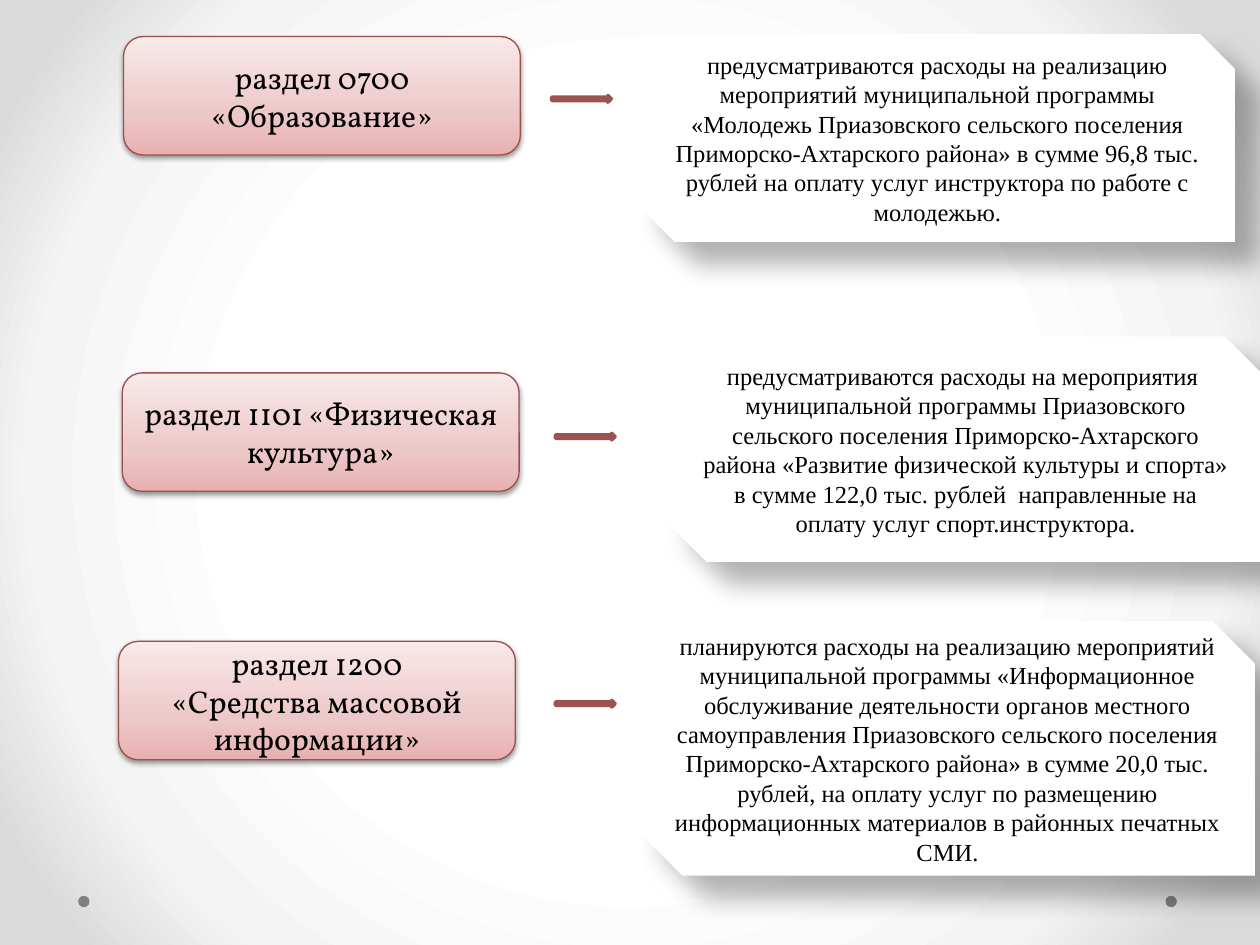
from pptx import Presentation
from pptx.dml.color import RGBColor
from pptx.enum.shapes import MSO_SHAPE as Shape
from pptx.enum.text import MSO_ANCHOR as Anchor, PP_ALIGN as Align
from pptx.oxml import parse_xml
from pptx.oxml.ns import nsdecls, qn
from pptx.util import Inches, Pt

ROWS = [
    {
        "head": ["раздел 0700 «Образование»"],
        "note": "предусматриваются расходы на реализацию мероприятий муниципальной "
                "программы «Молодежь Приазовского сельского поселения "
                "Приморско-Ахтарского района» в сумме 96,8 тыс. рублей на оплату "
                "услуг инструктора по работе с молодежью.",
        "label": (0.98, 0.29), "arrow": (4.38, 0.76),
        "card": (5.08, 0.27, 4.72, 1.65),
    },
    {
        "head": ["раздел 1101 «Физическая культура»"],
        "note": "предусматриваются расходы на мероприятия  муниципальной программы "
                "Приазовского сельского поселения Приморско-Ахтарского района "
                "«Развитие физической культуры и спорта» в сумме 122,0 тыс. рублей  "
                "направленные на оплату услуг спорт.инструктора.",
        "label": (0.97, 2.96), "arrow": (4.41, 3.44),
        "card": (5.31, 2.67, 4.71, 1.79),
    },
    {
        "head": ["раздел 1200", "«Средства массовой информации»"],
        "note": "планируются расходы на реализацию мероприятий муниципальной "
                "программы «Информационное обслуживание деятельности органов "
                "местного самоуправления Приазовского сельского поселения "
                "Приморско-Ахтарского района» в сумме 20,0 тыс. рублей, на оплату "
                "услуг по размещению информационных материалов в районных печатных "
                "СМИ.",
        "label": (0.94, 5.09), "arrow": (4.41, 5.56),
        "card": (5.08, 4.93, 4.88, 2.02),
    },
]
LABEL = (3.15, 0.94)
ARROW = (0.47, 0.05)
DOTS = [(0.62, 7.11), (9.25, 7.11)]
DOT = (0.09, 0.09)
PINK = [(0, "E8B0B0"), (35, "EDC8C8"), (100, "F9E9E9")]
GREY = [(50, "FFFFFF"), (76, "F4F4F4"), (92, "DADADA")]
DOWN = '<a:lin ang="16200000" scaled="0"/>'
ROUND = ('<a:path path="circle">'
         '<a:fillToRect l="50000" t="50000" r="50000" b="50000"/></a:path>')


def color(code):
    """Turn a hex string into a colour."""
    return RGBColor.from_string(code)


def blend(host, stops, tail):
    """Swap the solid fill of an element for a gradient."""
    marks = "".join(
        f'<a:gs pos="{pos * 1000}"><a:srgbClr val="{code}"/></a:gs>'
        for pos, code in stops)
    old = host.find(qn("a:solidFill"))
    host.replace(old, parse_xml(
        f'<a:gradFill {nsdecls("a")} rotWithShape="1">'
        f'<a:gsLst>{marks}</a:gsLst>{tail}</a:gradFill>'))


def shade(shape, alpha, blur, dist, angle):
    """Give a shape a black outer shadow."""
    shape._element.spPr.find(qn("a:effectLst")).append(parse_xml(
        f'<a:outerShdw {nsdecls("a")} blurRad="{Pt(blur)}" dist="{Pt(dist)}" '
        f'dir="{angle * 60000}" algn="tl" rotWithShape="0"><a:srgbClr val="000000">'
        f'<a:alpha val="{alpha * 1000}"/></a:srgbClr></a:outerShdw>'))


def draw(slide, kind, box, fill, line=None, width=0):
    """Add a filled shape with an optional outline."""
    shape = slide.shapes.add_shape(kind, *map(Inches, box))
    shape.shadow.inherit = False
    shape.fill.solid()
    shape.fill.fore_color.rgb = color(fill)
    if line:
        shape.line.color.rgb = color(line)
        shape.line.width = Pt(width)
    else:
        shape.line.fill.background()
    return shape


def write(shape, lines, font, size):
    """Fill a shape with centred black paragraphs."""
    frame = shape.text_frame
    frame.word_wrap = True
    frame.vertical_anchor = Anchor.MIDDLE
    for i, line in enumerate(lines):
        para = frame.add_paragraph() if i else frame.paragraphs[0]
        para.alignment = Align.CENTER
        run = para.add_run()
        run.text = line
        run.font.name = font
        run.font.size = Pt(size)
        run.font.color.rgb = color("000000")


def main():
    """Build the slide of budget sections."""
    deck = Presentation()
    deck.slide_width, deck.slide_height = Inches(10), Inches(7.5)
    slide = deck.slides.add_slide(deck.slide_layouts[6])
    slide.background.fill.solid()
    blend(slide._element.cSld.find(qn("p:bg")).find(qn("p:bgPr")), GREY, ROUND)
    for dot in DOTS:
        draw(slide, Shape.OVAL, dot + DOT, "808080")
    for row in ROWS:
        label = draw(slide, Shape.ROUNDED_RECTANGLE, row["label"] + LABEL,
                     "EDC8C8", "9A4E4E", 0.75)
        blend(label._element.spPr, PINK, DOWN)
        shade(label, 38, 3.1, 1.6, 90)
        write(label, row["head"], "Vollkorn", 18)
        card = draw(slide, Shape.SNIP_2_DIAG_RECTANGLE, row["card"], "FFFFFF")
        shade(card, 30, 15, 18, 45)
        write(card, [row["note"]], "Times New Roman", 14)
        draw(slide, Shape.RIGHT_ARROW, row["arrow"] + ARROW, "FFFFFF", "9C5252", 2.25)
    deck.save("out.pptx")


if __name__ == "__main__":
    main()
